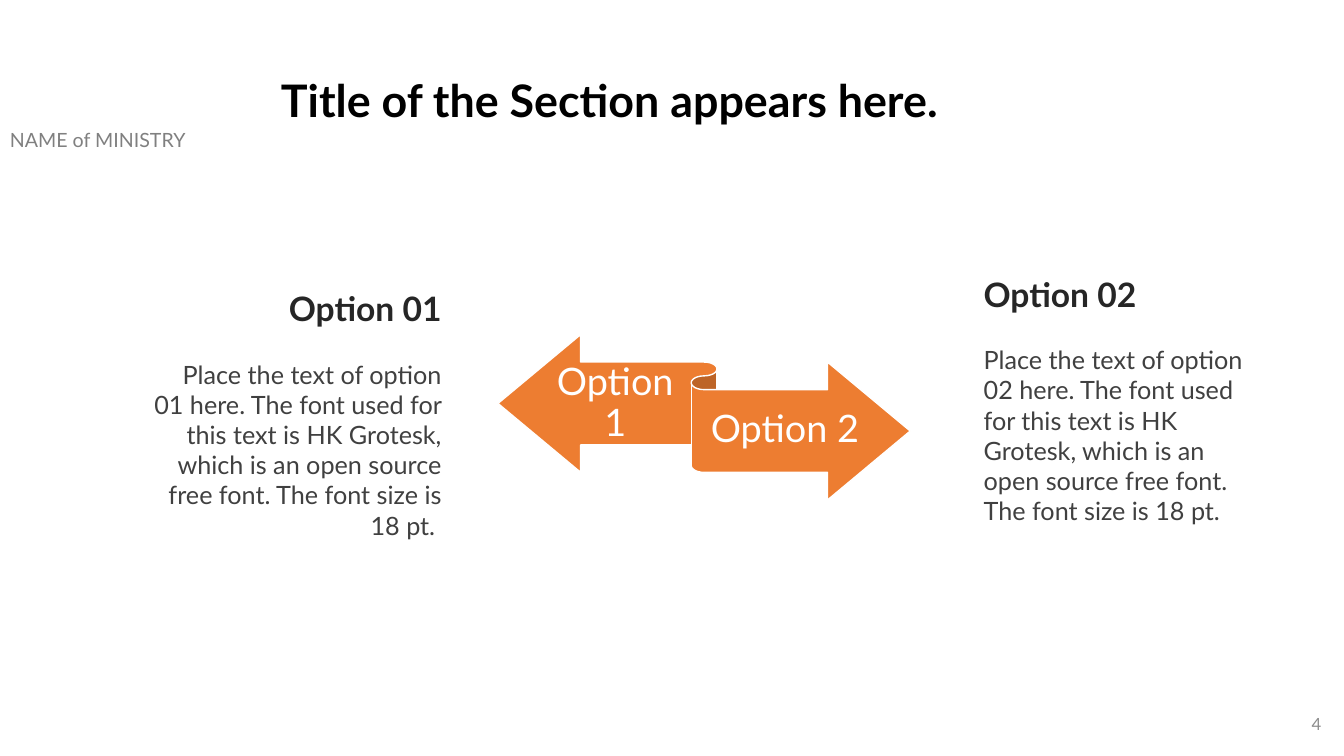
import pptx
import pptx.dml.color
import pptx.enum.shapes
import pptx.enum.text
import pptx.util

Cm = pptx.util.Cm
Pt = pptx.util.Pt
RGBColor = pptx.dml.color.RGBColor
Align = pptx.enum.text.PP_ALIGN
Anchor = pptx.enum.text.MSO_ANCHOR

WHITE = RGBColor(0xFF, 0xFF, 0xFF)
BLACK = RGBColor(0x00, 0x00, 0x00)
ORANGE = RGBColor(0xED, 0x7D, 0x31)
HEADING_GREY = RGBColor(0x26, 0x26, 0x26)
BODY_GREY = RGBColor(0x40, 0x40, 0x40)
MINISTRY_GREY = RGBColor(0x80, 0x80, 0x80)
NUMBER_GREY = RGBColor(0x8C, 0x8C, 0x8C)


def write_text(paragraph, text, *, font, size, color, bold=False,
               align=Align.LEFT, line_spacing=1.0, space_before=0):
    paragraph.alignment = align
    paragraph.line_spacing = line_spacing
    paragraph.space_before = Pt(space_before)
    run = paragraph.add_run()
    run.text = text
    run.font.name = font
    run.font.size = Pt(size)
    run.font.bold = bold
    run.font.color.rgb = color


class OptionsSlide:
    font = "Lato"

    def __init__(self, presentation):
        self.slide = presentation.slides.add_slide(presentation.slide_layouts[6])

    def frame(self, left, top, width, height, anchor=Anchor.TOP):
        box = self.slide.shapes.add_textbox(Cm(left), Cm(top), Cm(width), Cm(height))
        frame = box.text_frame
        frame.word_wrap = True
        frame.vertical_anchor = anchor
        return frame

    def text(self, text, *place, anchor=Anchor.TOP, **style):
        frame = self.frame(*place, anchor=anchor)
        write_text(frame.paragraphs[0], text, font=self.font, **style)
        return frame

    def ribbon(self, left, top, width, height):
        shape = self.slide.shapes.add_shape(
            pptx.enum.shapes.MSO_SHAPE.LEFT_RIGHT_RIBBON,
            Cm(left), Cm(top), Cm(width), Cm(height))
        shape.shadow.inherit = False
        shape.fill.solid()
        shape.fill.fore_color.rgb = ORANGE
        shape.line.color.rgb = WHITE
        shape.line.width = Pt(1)

    def ribbon_label(self, text, *place):
        frame = self.text(text, *place, anchor=Anchor.MIDDLE, size=27,
                          color=WHITE, align=Align.CENTER, line_spacing=0.9)
        frame.margin_left = frame.margin_right = 0
        frame.margin_top, frame.margin_bottom = Cm(0.25), Cm(0.28)

    def option(self, heading, body, *place, align):
        frame = self.text(heading, *place, size=24, color=HEADING_GREY,
                          bold=True, align=align)
        write_text(frame.add_paragraph(), body, font=self.font, size=18,
                   color=BODY_GREY, align=align, space_before=21.6)


def main():
    presentation = pptx.Presentation()
    presentation.slide_width = Cm(33.87)
    presentation.slide_height = Cm(19.05)
    options = OptionsSlide(presentation)

    options.text("NAME of MINISTRY", 0, 3.1, 7.37, 0.86,
                 size=14, color=MINISTRY_GREY)
    options.ribbon(12.55, 8.43, 10.39, 4.17)
    options.ribbon_label("Option 1", 13.79, 9.17, 3.43, 2.03)
    options.ribbon_label("Option 2", 17.75, 9.83, 4.06, 2.03)
    options.option(
        "Option 01",
        "Place the text of option 01 here. The font used for this text is "
        "HK Grotesk, which is an open source free font. The font size is 18 pt. ",
        3.63, 7.14, 7.75, 7.44, align=Align.RIGHT)
    options.option(
        "Option 02",
        "Place the text of option 02 here. The font used for this text is "
        "HK Grotesk, which is an open source free font. The font size is 18 pt.",
        24.54, 6.78, 7.49, 7.44, align=Align.LEFT)
    options.text("Title of the Section appears here. ", 6.73, 1.85, 17.27, 2.72,
                 size=32, color=BLACK, bold=True, align=Align.CENTER,
                 line_spacing=0.9)
    options.text("4", 25.93, 17.73, 7.62, 1.02, anchor=Anchor.MIDDLE,
                 size=12, color=NUMBER_GREY, align=Align.RIGHT)

    presentation.save("out.pptx")


if __name__ == "__main__":
    main()
